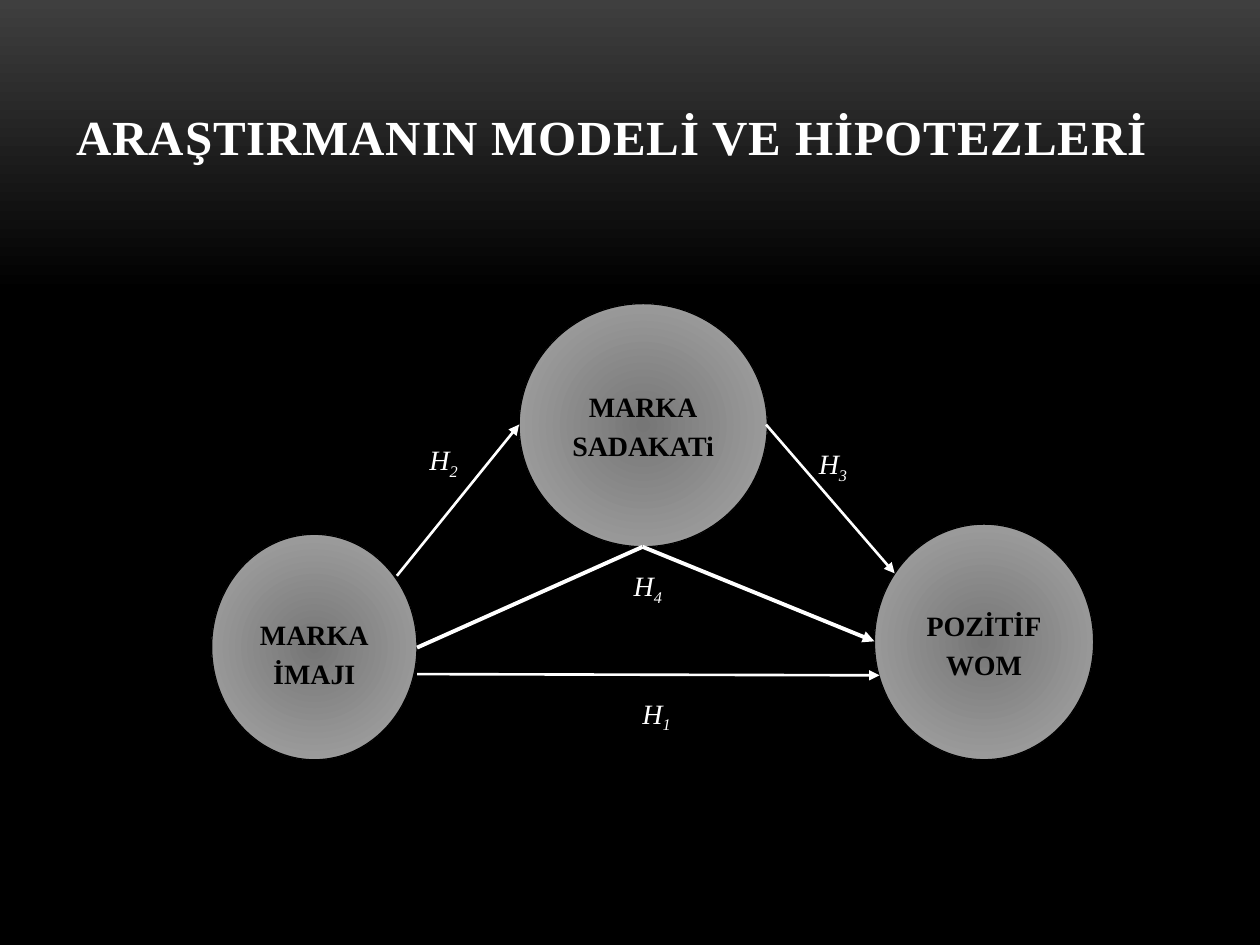
from dataclasses import dataclass

from pptx import Presentation
from pptx.dml.color import RGBColor
from pptx.enum.shapes import MSO_CONNECTOR as Connector, MSO_SHAPE as Shape
from pptx.enum.text import MSO_ANCHOR as Anchor, PP_ALIGN as Align
from pptx.oxml import parse_xml
from pptx.oxml.ns import nsdecls, qn
from pptx.util import Inches, Pt


@dataclass(frozen=True)
class Theme:
    font: str = "Times New Roman"
    light: str = "FFFFFF"
    dark: str = "000000"
    backdrop_top: str = "3F3F3F"
    circle_center: str = "767676"
    circle_edge: str = "A9A9A9"
    title_size: float = 28
    body_size: float = 16
    thin: float = 1.5
    thick: float = 2.25


THEME = Theme()


def color(value):
    return RGBColor.from_string(value)


def add_span(para, text, size=THEME.body_size, ink=THEME.light, bold=False,
             italic=False, baseline=0, spacing=0):
    """Add text to a paragraph; baseline is in percent, spacing in points."""
    span = para.add_run()
    span.text = text
    font = span.font
    font.name, font.size = THEME.font, Pt(size)
    font.bold, font.italic = bold, italic
    font.color.rgb = color(ink)
    if baseline:
        font._element.set("baseline", str(baseline * 1000))
    if spacing:
        font._element.set("spc", str(int(spacing * 100)))
    return span


def set_gradient(fill, *stops):
    fill.gradient()
    for stop, (position, value) in zip(fill.gradient_stops, stops):
        stop.position = position
        stop.color.rgb = color(value)


class ModelSlide:
    def __init__(self, page, theme):
        self.page, self.theme = page, theme

    def background(self):
        fill = self.page.background.fill
        set_gradient(fill, (0, self.theme.backdrop_top), (0.31, self.theme.dark))
        fill.gradient_angle = 270

    def text_box(self, left, top, width, height):
        box = self.page.shapes.add_textbox(
            Inches(left), Inches(top), Inches(width), Inches(height))
        box.text_frame.word_wrap = True
        return box.text_frame

    def title(self, text, left, top, width, height):
        frame = self.text_box(left, top, width, height)
        frame.vertical_anchor = Anchor.BOTTOM
        frame.margin_bottom = Inches(0.54)
        add_span(frame.paragraphs[0], text, size=self.theme.title_size,
                 bold=True, spacing=0.5)

    def circle(self, lines, left, top, width, height):
        box = self.page.shapes.add_shape(
            Shape.OVAL, Inches(left), Inches(top), Inches(width), Inches(height))
        box.shadow.inherit = False
        set_gradient(box.fill, (0, self.theme.circle_center), (1, self.theme.circle_edge))
        # Turn the linear gradient into one that spreads from the centre
        gradient = box._element.spPr.find(qn("a:gradFill"))
        gradient.remove(gradient.find(qn("a:lin")))
        gradient.append(parse_xml(
            f'<a:path {nsdecls("a")} path="circle"><a:fillToRect '
            'l="100000" t="100000" r="100000" b="100000"/></a:path>'))
        box.line.color.rgb = color(self.theme.dark)
        box.line.width = Pt(0.75)

        frame = box.text_frame
        frame.word_wrap = True
        frame.vertical_anchor = Anchor.TOP
        frame.margin_top = Inches(0.36)
        for index, line in enumerate(lines):
            para = frame.add_paragraph() if index else frame.paragraphs[0]
            para.alignment = Align.CENTER
            para.line_spacing = 1.15
            add_span(para, line, ink=self.theme.dark, bold=True)

    def line(self, start, end, width, arrow=True):
        link = self.page.shapes.add_connector(
            Connector.STRAIGHT, *map(Inches, start + end))
        link.line.color.rgb = color(self.theme.light)
        link.line.width = Pt(width)
        if arrow:
            link.line._get_or_add_ln().append(
                parse_xml(f'<a:tailEnd {nsdecls("a")} type="triangle"/>'))
        link._element.spPr.append(parse_xml(f'<a:effectLst {nsdecls("a")}/>'))

    def hypothesis(self, number, left, top):
        para = self.text_box(left, top, 0.59, 0.7).paragraphs[0]
        para.line_spacing = 1.15
        para.space_after = Pt(10)
        add_span(para, "H", italic=True)
        add_span(para, str(number), italic=True, baseline=-25)


def main():
    deck = Presentation()
    deck.slide_width, deck.slide_height = Inches(10), Inches(7.5)
    slide = ModelSlide(deck.slides.add_slide(deck.slide_layouts[6]), THEME)

    slide.background()
    slide.title("ARAŞTIRMANIN MODELİ VE HİPOTEZLERİ", 0.51, 0.6, 9.28, 1.25)

    # Concepts
    slide.circle(("MARKA", "İMAJI"), 1.68, 4.24, 1.63, 1.79)
    slide.circle(("MARKA", "SADAKATi"), 4.12, 2.41, 1.97, 1.93)
    slide.circle(("POZİTİF", "WOM"), 6.94, 4.16, 1.74, 1.87)

    # Direct effects
    for start, end in (
        ((3.31, 5.35), (6.98, 5.36)),
        ((3.15, 4.57), (4.12, 3.37)),
        ((6.08, 3.37), (7.1, 4.55)),
    ):
        slide.line(start, end, THEME.thin)

    # Mediated effect, by way of loyalty
    mediator = (5.1, 4.34)
    slide.line((3.31, 5.14), mediator, THEME.thick, arrow=False)
    slide.line(mediator, (6.94, 5.09), THEME.thick)

    # Hypothesis labels
    label_places = ((5, 5.43), (3.31, 3.42), (6.4, 3.45), (4.93, 4.42))
    for number, place in enumerate(label_places, start=1):
        slide.hypothesis(number, *place)

    deck.save("out.pptx")


if __name__ == "__main__":
    main()
